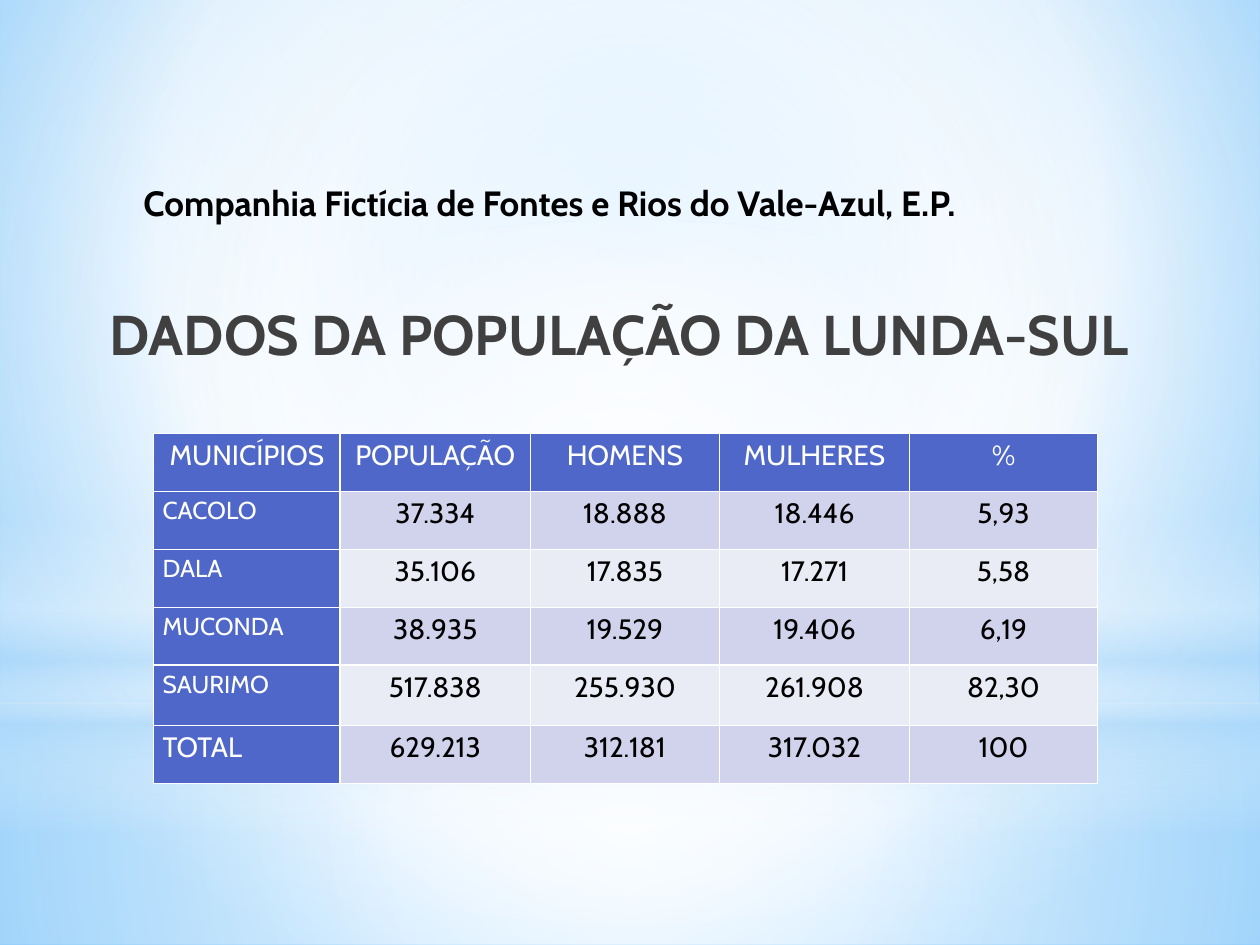
from lxml import etree
from pptx import Presentation
from pptx.dml.color import RGBColor
from pptx.enum.shapes import MSO_SHAPE
from pptx.enum.text import MSO_ANCHOR, PP_ALIGN
from pptx.oxml import parse_xml
from pptx.oxml.ns import nsdecls, qn
from pptx.util import Inches, Pt

RECT, OVAL = MSO_SHAPE.RECTANGLE, MSO_SHAPE.OVAL
LEFT, MID, RIGHT, JUST = PP_ALIGN.LEFT, PP_ALIGN.CENTER, PP_ALIGN.RIGHT, PP_ALIGN.JUSTIFY
TOP = MSO_ANCHOR.TOP
WIDE, HIGH = 10, 7.5
FONT = "Cabin"
WHITE, BLACK, GREY, BLUE = "FFFFFF", "000000", "404040", "4E67C8"
SKY = "B4DCFA"
BANDS = ["D0D3EB", "E9EBF5"]

TITLE = "DADOS DA POPULAÇÃO DA LUNDA-SUL"
FIRM = "Companhia Fictícia de Fontes e Rios do Vale-Azul, E.P."
ROWS = [
    ["MUNICÍPIOS", "POPULAÇÃO", "HOMENS", "MULHERES", "%"],
    ["CACOLO", "37.334", "18.888", "18.446", "5,93"],
    ["DALA", "35.106", "17.835", "17.271", "5,58"],
    ["MUCONDA", "38.935", "19.529", "19.406", "6,19"],
    ["SAURIMO", "517.838", "255.930", "261.908", "82,30"],
    ["TOTAL", "629.213", "312.181", "317.032", "100"],
]
COLS = [1.48, 1.51, 1.5, 1.51, 1.49]
TALL = [0.46, 0.46, 0.46, 0.46, 0.48, 0.46]

BACK = [(0, "9ED5FF", 100), (60, WHITE, 100), (100, "5BB9FF", 100)]
CORE = (50, 50, 50, 50)
GLOWS = [
    (RECT, 5.58, 1.92, CORE, [(0, WHITE, 91), (37, WHITE, 76), (100, SKY, 79)]),
    (RECT, 0, 5.58, CORE, [(0, WHITE, 89), (48, WHITE, 62), (100, SKY, 79)]),
    (RECT, 4.12, 2.5, None, [(0, WHITE, 0), (29, WHITE, 30), (45, SKY, 40),
                             (55, WHITE, 26), (65, SKY, 60), (100, WHITE, 0)]),
    (OVAL, 1.75, 5.58, CORE, [(0, WHITE, 100), (56, WHITE, 0)]),
]


def color(code):
    return RGBColor.from_string(code)


def blend(fill, root, stops, focus=None):
    fill.gradient()
    grad = next(root.iter(qn("a:gradFill")))
    marks = "".join(
        f'<a:gs pos="{at * 1000}"><a:srgbClr val="{code}">'
        f'<a:alpha val="{alpha * 1000}"/></a:srgbClr></a:gs>'
        for at, code, alpha in stops)
    if focus:
        sides = " ".join(f'{side}="{share * 1000}"' for side, share in zip("ltrb", focus))
        way = f'<a:path path="circle"><a:fillToRect {sides}/></a:path>'
    else:
        way = '<a:lin ang="5400000" scaled="0"/>'
    new = parse_xml(f'<a:gradFill {nsdecls("a")} rotWithShape="1">'
                    f'<a:gsLst>{marks}</a:gsLst>{way}</a:gradFill>')
    grad.getparent().replace(grad, new)


def write(frame, text, size=16, ink=BLACK, bold=False, align=LEFT, space=1.0):
    frame.word_wrap = True
    para = frame.paragraphs[0]
    para.alignment, para.line_spacing = align, space
    run = para.add_run()
    run.text = text
    font = run.font
    font.name, font.size, font.bold = FONT, Pt(size), bold
    font.color.rgb = color(ink)


def edge(cell):
    props = cell._tc.get_or_add_tcPr()
    for side in "LRTB":
        line = etree.SubElement(props, qn(f"a:ln{side}"), w=str(Pt(1)))
        solid = etree.SubElement(line, qn("a:solidFill"))
        etree.SubElement(solid, qn("a:srgbClr"), val=WHITE)


def place(shape, *box):
    shape.left, shape.top, shape.width, shape.height = map(Inches, box)


def main():
    deck = Presentation()
    deck.slide_width, deck.slide_height = Inches(WIDE), Inches(HIGH)
    slide = deck.slides.add_slide(deck.slide_layouts[5])
    shapes = slide.shapes
    blend(slide.background.fill, slide._element, BACK, (20, 10, 20, 60))

    for kind, top, high, focus, stops in GLOWS:
        glow = shapes.add_shape(kind, 0, Inches(top), Inches(WIDE), Inches(high))
        glow.shadow.inherit = False
        glow.line.fill.background()
        blend(glow.fill, glow._element, stops, focus)

    title = shapes.title
    place(title, 0.56, 2.33, 8.5, 0.79)
    title.text_frame.vertical_anchor = TOP
    write(title.text_frame, TITLE, size=32, ink=GREY, bold=True, align=RIGHT)
    shapes._spTree.append(title._element)

    table = shapes.add_table(len(ROWS), len(COLS), Inches(1.22), Inches(3.44),
                             Inches(sum(COLS)), Inches(sum(TALL))).table
    for col, wide in zip(table.columns, COLS):
        col.width = Inches(wide)
    for r, (row, high) in enumerate(zip(ROWS, TALL)):
        table.rows[r].height = Inches(high)
        for c, text in enumerate(row):
            cell = table.cell(r, c)
            head = r == 0 or c == 0
            small = c == 0 and 0 < r < len(ROWS) - 1
            cell.margin_left = cell.margin_right = Inches(0.07)
            cell.margin_top = cell.margin_bottom = 0
            edge(cell)
            cell.fill.solid()
            cell.fill.fore_color.rgb = color(BLUE if head else BANDS[(r - 1) % 2])
            write(cell.text_frame, text, size=14 if small else 16,
                  ink=WHITE if head else BLACK,
                  align=LEFT if c == 0 and r else MID, space=1.15)

    firm = shapes.add_textbox(0, 0, 0, 0)
    place(firm, 1.04, 1.39, 8.03, 0.44)
    write(firm.text_frame, FIRM, size=20, bold=True, align=JUST)
    deck.save("out.pptx")


if __name__ == "__main__":
    main()
